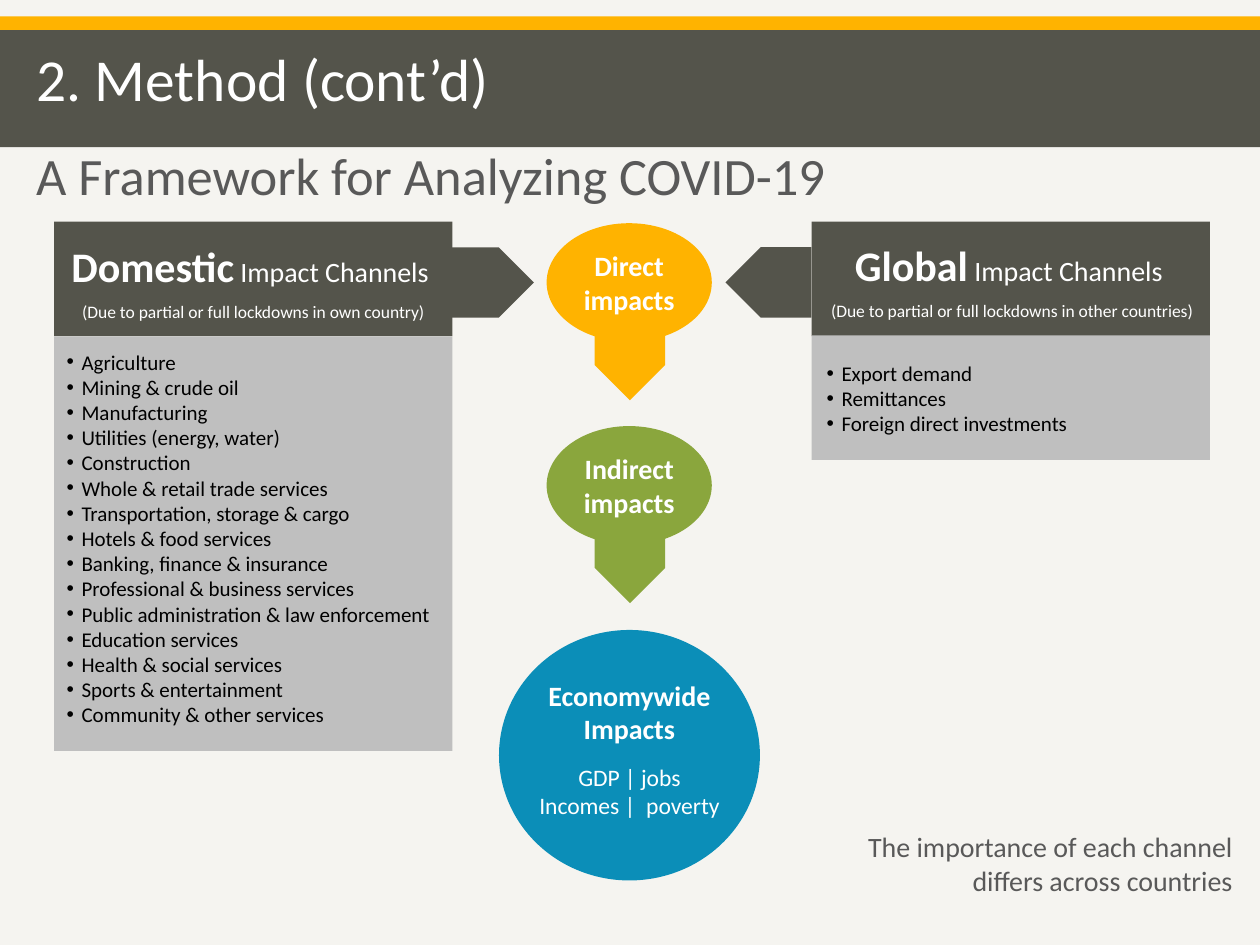
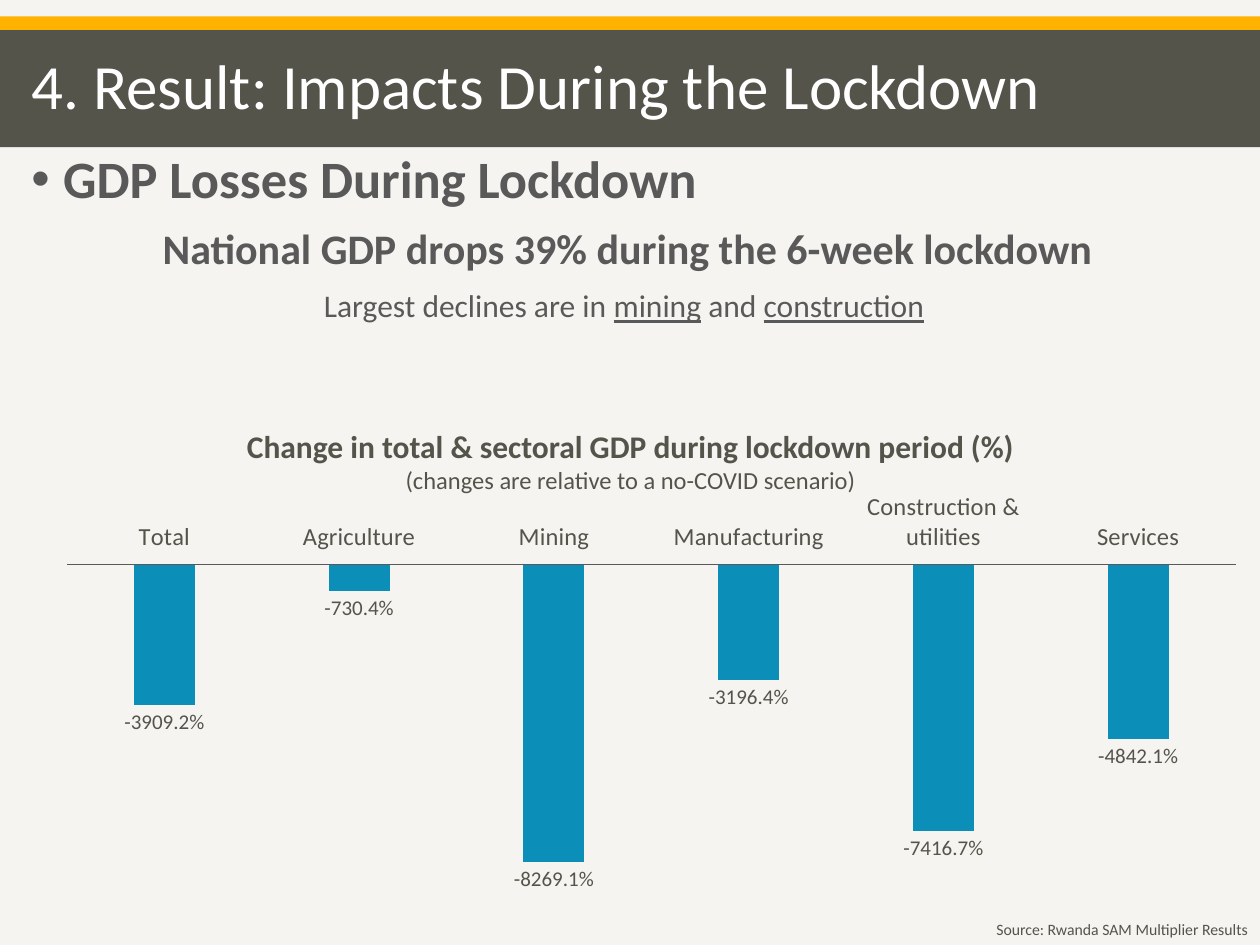
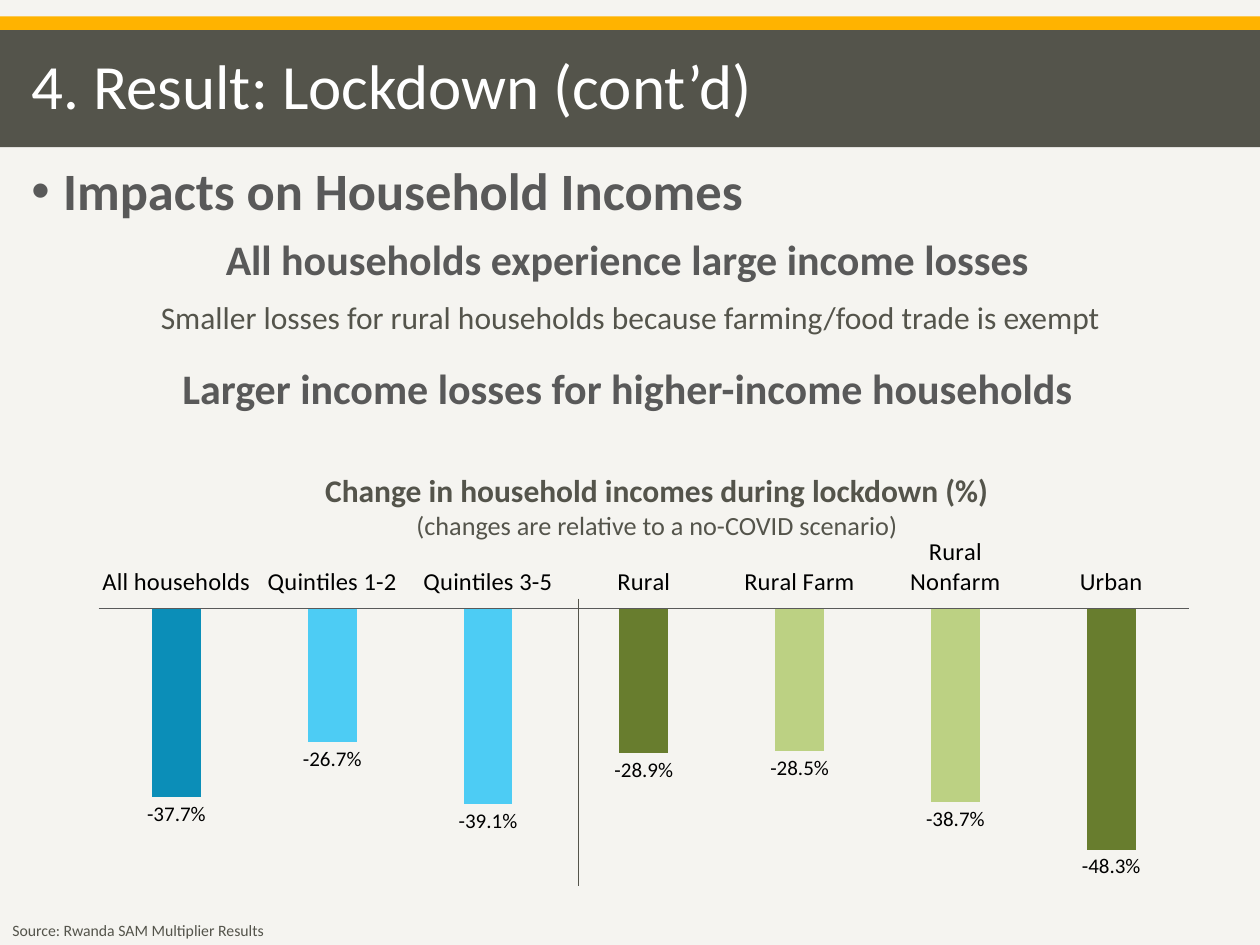
"""Build three slides on the economic impacts of a COVID-19 lockdown."""
from lxml.etree import SubElement
from pptx import Presentation
from pptx.chart.data import CategoryChartData as Data
from pptx.dml.color import RGBColor as RGB
from pptx.enum.chart import XL_CHART_TYPE as Kind, XL_LABEL_POSITION as Spot
from pptx.enum.chart import XL_TICK_LABEL_POSITION as Tick, XL_TICK_MARK as Mark
from pptx.enum.shapes import MSO_CONNECTOR as Link, MSO_SHAPE as Form
from pptx.enum.text import MSO_ANCHOR as Anchor, MSO_AUTO_SIZE as Auto, PP_ALIGN as Align
from pptx.oxml import parse_xml
from pptx.oxml.ns import nsdecls, qn
from pptx.util import Cm, Pt

FONT = "Calibri"
PAPER = RGB(0xF5, 0xF4, 0xF0)
DARK = RGB(0x54, 0x54, 0x4B)
GRAY = RGB(0x59, 0x59, 0x59)
PALE = RGB(0xBF, 0xBF, 0xBF)
GOLD = RGB(0xFF, 0xB3, 0x00)
GREEN = RGB(0x8A, 0xA6, 0x3D)
MOSS = RGB(0x68, 0x7D, 0x2E)
LIME = RGB(0xBC, 0xD1, 0x83)
BLUE = RGB(0x0B, 0x8E, 0xB8)
SKY = RGB(0x4D, 0xCC, 0xF4)
WHITE = RGB(0xFF, 0xFF, 0xFF)
BLACK = RGB(0, 0, 0)


def put(frame, text, size=16, color=GRAY, bold=False, align=Align.LEFT,
        before=0, lead=1.0, indent=0):
    """Add a paragraph; text is a string or a list of (string, changes) runs."""
    para = frame.add_paragraph() if frame.text else frame.paragraphs[0]
    prop = para._p.get_or_add_pPr()
    prop.set("marL", str(Cm(indent)))
    prop.set("indent", str(-Cm(indent)))
    if indent:
        SubElement(prop, qn("a:buChar")).set("char", "•")
    else:
        SubElement(prop, qn("a:buNone"))
    para.alignment, para.line_spacing = align, lead
    para.space_before, para.space_after = Pt(before), Pt(0)
    for part, diff in [(text, {})] if isinstance(text, str) else text:
        run = para.add_run()
        run.text = part
        font = run.font
        font.name, font.size = FONT, Pt(diff.get("size", size))
        font.bold, font.color.rgb = diff.get("bold", bold), color
        font.underline = diff.get("under", False)


class Deck:
    """Hold the shared style and the current slide."""

    def __init__(self):
        self.prs = Presentation()
        self.prs.slide_width, self.prs.slide_height = Cm(25.4), Cm(19.05)
        self.slide = None
        fill = self.prs.slide_master.background.fill
        fill.solid()
        fill.fore_color.rgb = PAPER

    def start(self, layout, title, at, size=36):
        self.slide = self.prs.slides.add_slide(self.prs.slide_layouts[layout])
        frame = self.hold(0, at)
        frame.vertical_anchor = Anchor.MIDDLE
        put(frame, title, size=size, color=WHITE, lead=0.9)

    def bands(self):
        tree = self.prs.slide_master.shapes.element
        bars = [(0.33, 0.28, GOLD), (0.61, 2.36, DARK)]
        for num, (top, high, color) in enumerate(bars):
            node = self.shape(Form.RECTANGLE, (0, top, 25.4, high), color).element
            node.xpath("p:nvSpPr/p:cNvPr")[0].set("id", str(20 + num))
            tree.insert(2 + num, node)

    def hold(self, num, at):
        """Move a placeholder to the front and give its text frame."""
        box = self.slide.placeholders[num]
        box.left, box.top, box.width, box.height = map(Cm, at)
        self.slide.shapes.element.append(box.element)
        box.text_frame.auto_size = Auto.NONE
        return box.text_frame

    def list(self, num, at, items):
        frame = self.hold(num, at)
        for item in items:
            put(frame, item, size=12, color=BLACK, indent=0.3)

    def body(self, at, head, lines):
        frame = self.hold(1, at)
        put(frame, head, size=30, bold=True, lead=0.9, indent=0.64)
        for text, form in lines:
            form = {"size": 24, "bold": True, "before": 10} | form
            put(frame, text, align=Align.CENTER, lead=0.9, **form)

    def text(self, at, text, anchor=Anchor.TOP, **form):
        frame = self.slide.shapes.add_textbox(*map(Cm, at)).text_frame
        frame.word_wrap, frame.vertical_anchor = True, anchor
        put(frame, text, **form)
        return frame

    def shape(self, form, at, color, turn=0):
        item = self.slide.shapes.add_shape(form, *map(Cm, at))
        item.shadow.inherit = False
        item.fill.solid()
        item.fill.fore_color.rgb = color
        item.line.fill.background()
        item.rotation = turn
        return item

    def arrow(self, at, color, turn=0):
        item = self.shape(Form.DOWN_ARROW, at, color, turn)
        item.adjustments[0], item.adjustments[1] = 1, 0.5

    def oval(self, at, color, text, foot=0):
        frame = self.shape(Form.OVAL, at, color).text_frame
        frame.margin_left = frame.margin_right = frame.margin_top = 0
        frame.margin_bottom = Cm(foot)
        frame.vertical_anchor, frame.word_wrap = Anchor.MIDDLE, True
        put(frame, text, color=WHITE, bold=True, align=Align.CENTER)
        return frame

    def rule(self, left, top, end):
        line = self.slide.shapes.add_connector(
            Link.STRAIGHT, Cm(left), Cm(top), Cm(left), Cm(end))
        line.line.color.rgb, line.line.width = DARK, Pt(0.5)
        SubElement(line.element.spPr, qn("a:effectLst"))

    def label(self, at, text, size):
        frame = self.text(at, text, size=18, color=DARK, bold=True, align=Align.CENTER)
        put(frame, "(changes are relative to a no-COVID scenario)",
            size=size, color=DARK, align=Align.CENTER)

    def source(self, left, top, align):
        self.text((left, top, 7.29, 0.64), "Source: Rwanda SAM Multiplier Results",
                  size=9, color=DARK, align=align)

    def chart(self, at, names, vals, fills, plot, low, mask, ink, thick):
        data = Data()
        data.categories = names
        data.add_series("Series 1", vals)
        chart = self.slide.shapes.add_chart(
            Kind.COLUMN_CLUSTERED, *map(Cm, at), data).chart
        chart.has_legend = chart.has_title = False
        chart.font.name, chart.font.size = FONT, Pt(14)
        chart.font.color.rgb = ink
        axis = chart.category_axis
        axis.major_tick_mark = axis.minor_tick_mark = Mark.NONE
        axis.tick_label_position = Tick.HIGH
        axis.format.line.color.rgb, axis.format.line.width = GRAY, Pt(thick)
        scale = chart.value_axis
        scale.visible = scale.has_major_gridlines = False
        scale.minimum_scale, scale.maximum_scale = low, 0
        bars = chart.plots[0]
        bars.gap_width, bars.overlap, bars.vary_by_categories = 219, -27, False
        bars.has_data_labels = True
        tags = bars.data_labels
        tags.show_value, tags.position = True, Spot.OUTSIDE_END
        tags.number_format, tags.number_format_is_linked = mask, False
        tags.font.name, tags.font.size, tags.font.color.rgb = FONT, Pt(12), ink
        series = bars.series[0]
        series.invert_if_negative = False
        series.format.fill.solid()
        series.format.fill.fore_color.rgb = fills[0]
        for num, color in enumerate(fills[1:], 1):
            fill = series.points[num].format.fill
            fill.solid()
            fill.fore_color.rgb = color
        self.frame(chart, plot)

    def frame(self, chart, plot):
        """Fix the inner plot area as shares of the chart."""
        area = chart.element.xpath("c:chart/c:plotArea")[0]
        for old in area.xpath("c:layout"):
            area.remove(old)
        modes = "".join(f'<c:{k}Mode val="edge"/>' for k in "xy")
        sides = "".join(f'<c:{k} val="{v}"/>' for k, v in zip("xywh", plot))
        area.insert(0, parse_xml(
            f'<c:layout {nsdecls("c")}><c:manualLayout><c:layoutTarget val="inner"/>'
            f"{modes}{sides}</c:manualLayout></c:layout>"))


def method(deck):
    deck.start(3, "2. Method (cont’d)", (0.48, 0.94, 22.43, 1.42), size=34)
    deck.bands()
    home = ["Agriculture", "Mining & crude oil", "Manufacturing",
            "Utilities (energy, water)", "Construction",
            "Whole & retail trade services", "Transportation, storage & cargo",
            "Hotels & food services", "Banking, finance & insurance",
            "Professional & business services",
            "Public administration & law enforcement", "Education services",
            "Health & social services", "Sports & entertainment",
            "Community & other services"]
    world = ["Export demand", "Remittances", "Foreign direct investments"]
    panels = [
        ("Domestic", "own country", 1.09, (1.09, 4.72, 8.03, 1.88),
         (6.78, 8.36), (1.09, 6.91, 7.85, 7.95), home, 9.19, 270),
        ("Global", "other countries", 16.36, (16.41, 4.7, 7.98, 1.88),
         (6.76, 2.51), (16.41, 7.14, 7.06, 1.8), world, 14.78, 90)]
    for num, panel in enumerate(panels, 1):
        name, place, left, head, (top, high), spot, items, tip, turn = panel
        deck.shape(Form.RECTANGLE, (left, 4.47, 8.03, 2.31), DARK)
        frame = deck.text(
            head, [(name, {"size": 24}), (" ", {}), ("Impact Channels ", {"bold": False})],
            color=WHITE, bold=True, align=Align.CENTER)
        put(frame, f"(Due to partial or full lockdowns in {place})",
            size=10, color=WHITE, bold=True and False, align=Align.CENTER, before=6)
        deck.shape(Form.RECTANGLE, (left, top, 8.03, high), PALE)
        deck.list(num, spot, items)
        deck.arrow((tip, 4.83, 1.42, 1.73), DARK, turn)
    for name, top, color in [("Direct", 4.5, GOLD), ("Indirect", 8.59, GREEN)]:
        deck.oval((11.02, top, 3.33, 2.39), color, f"{name} impacts")
        deck.arrow((11.99, top + 2.05, 1.42, 1.52), color)
    frame = deck.oval((10.06, 12.7, 5.26, 5.05), BLUE, "Economywide Impacts", 0.25)
    for text, gap in [("GDP | jobs", 10), ("Incomes |  poverty", 0)]:
        put(frame, text, size=13.5, color=WHITE, align=Align.CENTER, before=gap)
    deck.text((17.07, 16.69, 8.03, 1.42),
              "The importance of each channel differs across countries",
              Anchor.MIDDLE, align=Align.RIGHT)
    deck.text((0.48, 3.2, 22.68, 0.64), "A Framework for Analyzing COVID-19",
              Anchor.MIDDLE, size=30)


def output(deck):
    deck.start(1, "4. Result: Impacts During the Lockdown", (0.38, 0.61, 22.43, 2.36))
    deck.body((0.38, 2.97, 24.54, 6.45), "GDP Losses During Lockdown", [
        ("National GDP drops 39% during the 6-week lockdown", {}),
        ([("Largest declines are in ", {}), ("mining", {"under": True}), (" and ", {}),
          ("construction", {"under": True}), (" ", {})], {"size": 18, "bold": False})])
    deck.source(18.11, 18.42, Align.RIGHT)
    deck.label((3.76, 8.48, 17.91, 1.63),
               "Change in total & sectoral GDP during lockdown period (%)", 14)
    deck.chart((0.86, 9.75, 24.54, 8.31),
               ["Total", "Agriculture", "Mining", "Manufacturing",
                "Construction & utilities", "Services"],
               [-39.092, -7.304, -82.691, -31.964, -74.167, -48.421],
               [BLUE], (0.02, 0.197, 0.96, 0.784), -90, "0.0%", DARK, 0.75)


def income(deck):
    deck.start(1, "4. Result: Lockdown (cont’d)", (0.38, 0.61, 22.43, 2.36))
    deck.body((0.38, 3.2, 24.54, 6.32), "Impacts on Household Incomes", [
        ("All households experience large income losses", {}),
        ("Larger income losses for higher-income households", {"before": 47.5})])
    deck.text((0.53, 5.89, 24.36, 1.02),
              "Smaller losses for rural households because farming/food trade is exempt",
              size=18, color=DARK, align=Align.CENTER)
    deck.source(0, 18.44, Align.LEFT)
    deck.label((5.64, 9.37, 15.21, 2.44),
               "Change in household incomes during lockdown (%)", 15)
    deck.chart((1.6, 10.82, 22.76, 7.62),
               ["All households", "Quintiles 1-2", "Quintiles 3-5", "Rural",
                "Rural Farm", "Rural Nonfarm", "Urban"],
               [-37.7, -26.7, -39.1, -28.9, -28.5, -38.7, -48.3],
               [BLUE, SKY, SKY, MOSS, LIME, LIME, MOSS],
               (0.017, 0.183, 0.966, 0.799), -60, '0.0"%"', BLACK, 0.5)
    deck.rule(11.66, 12.07, 17.86)


def main():
    deck = Deck()
    for build in (method, output, income):
        build(deck)
    deck.prs.save("out.pptx")


if __name__ == "__main__":
    main()
